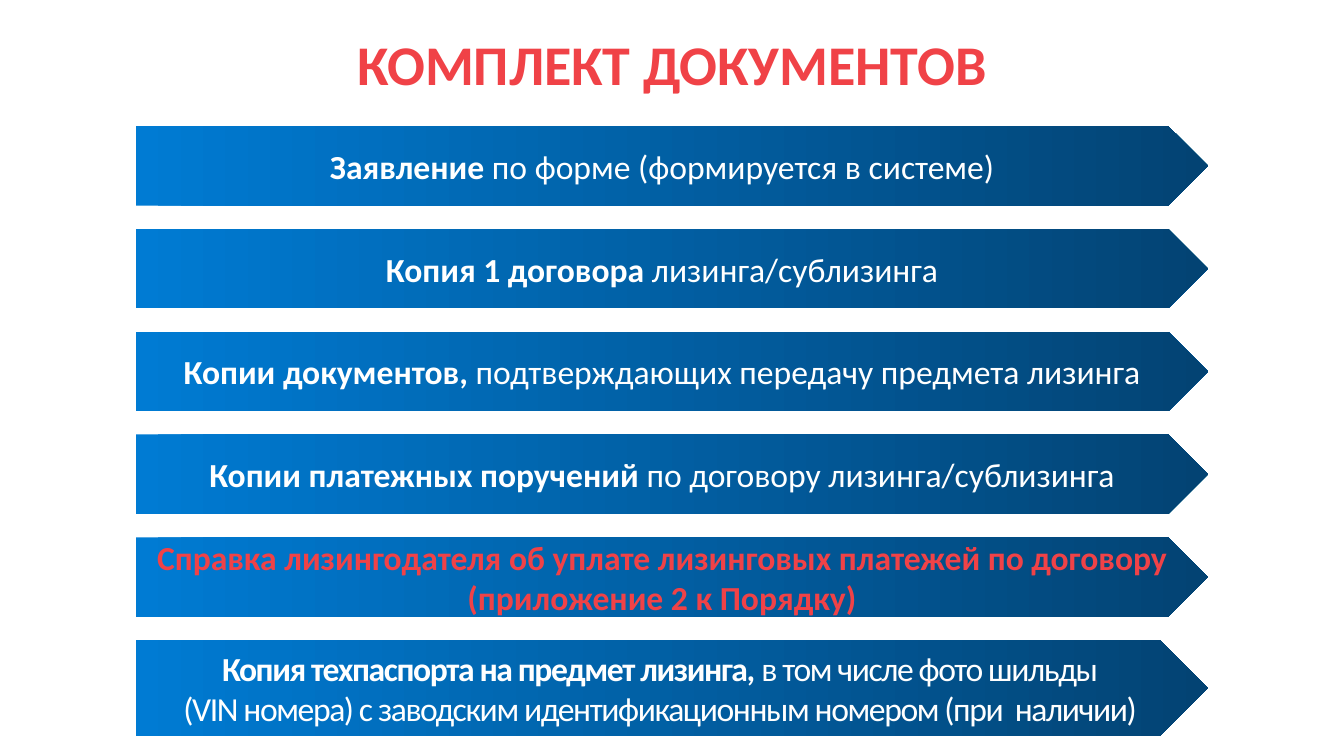
from pptx import Presentation
from pptx.dml.color import RGBColor
from pptx.enum.shapes import MSO_SHAPE
from pptx.enum.text import MSO_ANCHOR, PP_ALIGN
from pptx.util import Inches, Pt

RED = RGBColor(0xF0, 0x42, 0x47)
WHITE = RGBColor(0xFF, 0xFF, 0xFF)
BLUE = RGBColor(0x00, 0x7B, 0xD3)
NAVY = RGBColor(0x03, 0x43, 0x73)

# Each document is a list of lines; each line is a list of (text, bold) parts
DOCUMENTS = [
    dict(lines=[[("Заявление", True), (" по форме (формируется в системе)", False)]]),
    dict(lines=[[("Копия 1 договора", True), (" лизинга/сублизинга", False)]]),
    dict(lines=[[("Копии документов, ", True),
                 ("подтверждающих передачу предмета лизинга", False)]]),
    dict(lines=[[("Копии платежных поручений", True),
                 (" по договору лизинга/сублизинга", False)]]),
    dict(lines=[[("Справка лизингодателя об уплате лизинговых платежей "
                  "по договору (приложение 2 к Порядку)", True)]], color=RED),
    dict(lines=[[("Копия техпаспорта на предмет лизинга, ", True),
                 ("в том числе фото шильды", False)],
                [("(VIN номера) с заводским идентификационным номером "
                  "(при  наличии)", False)]], height=0.95, tracking=-1),
]


def write_text(frame, lines, size=24, color=WHITE, tracking=0, line_spacing=None):
    """Fill a text frame with centred lines of (text, bold) parts."""
    frame.word_wrap = True
    frame.vertical_anchor = MSO_ANCHOR.MIDDLE
    for index, parts in enumerate(lines):
        paragraph = frame.add_paragraph() if index else frame.paragraphs[0]
        paragraph.alignment = PP_ALIGN.CENTER
        paragraph.line_spacing = line_spacing
        for text, bold in parts:
            run = paragraph.add_run()
            run.text = text
            run.font.name = "Calibri"
            run.font.size = Pt(size)
            run.font.bold = bold
            run.font.color.rgb = color
            if tracking:
                run.font._element.set("spc", str(tracking * 100))


def add_title(slide, left, top, width, height):
    title = slide.shapes.add_textbox(Inches(left), Inches(top),
                                     Inches(width), Inches(height))
    write_text(title.text_frame, [[("КОМПЛЕКТ ДОКУМЕНТОВ", True)]],
               size=40, color=RED, line_spacing=0.96)


def add_document_arrow(slide, left, top, width, lines, height=0.79, **text_format):
    arrow = slide.shapes.add_shape(MSO_SHAPE.PENTAGON, Inches(left), Inches(top),
                                   Inches(width), Inches(height))
    arrow.shadow.inherit = False
    arrow.line.fill.background()
    # Left-to-right gradient
    arrow.fill.gradient()
    arrow.fill.gradient_angle = 0
    for stop, color in zip(arrow.fill.gradient_stops, (BLUE, NAVY)):
        stop.color.rgb = color
    write_text(arrow.text_frame, lines, **text_format)


def add_document_list(slide, left, top, width, pitch):
    for row, document in enumerate(DOCUMENTS):
        add_document_arrow(slide, left, top + row * pitch, width, **document)


def main():
    presentation = Presentation()
    presentation.slide_width = Inches(13.33)
    presentation.slide_height = Inches(7.5)
    slide = presentation.slides.add_slide(presentation.slide_layouts[6])
    add_title(slide, left=0, top=-0.06, width=13.33, height=1.43)
    add_document_list(slide, left=1.35, top=1.25, width=10.63, pitch=1.02)
    presentation.save("out.pptx")


if __name__ == "__main__":
    main()
